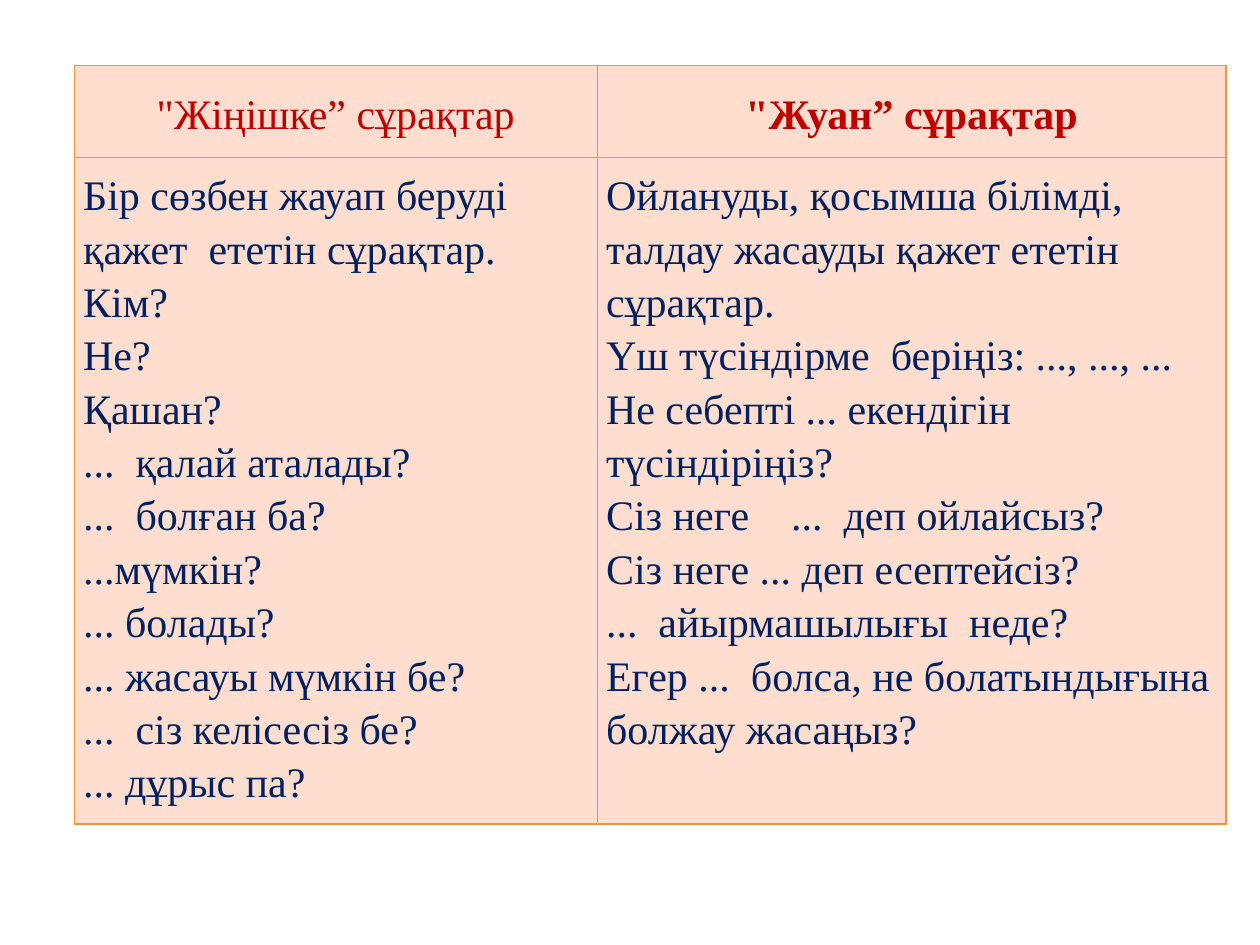
"""Builds a slide with a two-column table comparing thin and thick questions."""
import pptx
import pptx.dml.color
import pptx.enum.text
import pptx.oxml
import pptx.oxml.ns
import pptx.util

COLORS = {"heading": "C00000", "body": "002060", "fill": "FFDDCF", "border": "F69240"}
FONT = "Times New Roman"
SLIDE_SIZE = (10, 7.5)
TABLE_LEFT, TABLE_TOP = 0.59, 0.52
COLUMN_WIDTHS = (4.15, 4.99)
ROW_HEIGHTS = (0.73, 5.29)
MARGIN = 0.07
BORDER_WIDTH = 0.75

QUESTION_TYPES = [
    {
        "heading": "\"Жіңішке” сұрақтар",
        "bold": False,
        "questions": [
            "Бір сөзбен жауап беруді қажет  ететін сұрақтар.",
            "Кім?",
            "Не?",
            "Қашан?",
            "...  қалай аталады?",
            "...  болған ба?",
            "...мүмкін?",
            "... болады?",
            "... жасауы мүмкін бе?",
            "...  сіз келісесіз бе?",
            "... дұрыс па?",
        ],
    },
    {
        "heading": "\"Жуан” сұрақтар",
        "bold": True,
        "questions": [
            "Ойлануды, қосымша білімді, талдау жасауды қажет ететін сұрақтар.",
            "Үш түсіндірме  беріңіз: ..., ..., ...",
            "Не себепті ... екендігін түсіндіріңіз?",
            "Сіз неге    ...  деп ойлайсыз?",
            "Сіз неге ... деп есептейсіз?",
            "...  айырмашылығы  неде?",
            "Егер ...  болса, не болатындығына болжау жасаңыз?",
        ],
    },
]


def write_text(frame, lines, color, bold=False, align=pptx.enum.text.PP_ALIGN.LEFT):
    for index, line in enumerate(lines):
        para = frame.add_paragraph() if index else frame.paragraphs[0]
        para.alignment = align
        para.line_spacing = 1.15
        span = para.add_run()
        span.text = line
        span.font.name = FONT
        span.font.size = pptx.util.Pt(24)
        span.font.bold = bold
        span.font.color.rgb = pptx.dml.color.RGBColor.from_string(color)


def style_cell(cell, anchor):
    cell.vertical_anchor = anchor
    for side in ("left", "top", "right", "bottom"):
        setattr(cell, f"margin_{side}", pptx.util.Inches(MARGIN))
    cell.fill.solid()
    cell.fill.fore_color.rgb = pptx.dml.color.RGBColor.from_string(COLORS["fill"])
    properties = cell._tc.get_or_add_tcPr()
    for position, tag in enumerate(("lnL", "lnR", "lnT", "lnB")):
        border = pptx.oxml.parse_xml(
            f'<a:{tag} {pptx.oxml.ns.nsdecls("a")} w="{pptx.util.Pt(BORDER_WIDTH)}">'
            f'<a:solidFill><a:srgbClr val="{COLORS["border"]}"/></a:solidFill></a:{tag}>'
        )
        properties.insert(position, border)


def main():
    deck = pptx.Presentation()
    deck.slide_width, deck.slide_height = map(pptx.util.Inches, SLIDE_SIZE)
    page = deck.slides.add_slide(deck.slide_layouts[6])
    bounds = (TABLE_LEFT, TABLE_TOP, sum(COLUMN_WIDTHS), sum(ROW_HEIGHTS))
    table = page.shapes.add_table(
        len(ROW_HEIGHTS), len(COLUMN_WIDTHS), *map(pptx.util.Inches, bounds)
    ).table
    for row, height in zip(table.rows, ROW_HEIGHTS):
        row.height = pptx.util.Inches(height)
    for index, (width, kind) in enumerate(zip(COLUMN_WIDTHS, QUESTION_TYPES)):
        table.columns[index].width = pptx.util.Inches(width)
        heading, body = table.cell(0, index), table.cell(1, index)
        style_cell(heading, pptx.enum.text.MSO_ANCHOR.MIDDLE)
        style_cell(body, pptx.enum.text.MSO_ANCHOR.TOP)
        write_text(heading.text_frame, [kind["heading"]], COLORS["heading"],
                   bold=kind["bold"], align=pptx.enum.text.PP_ALIGN.CENTER)
        write_text(body.text_frame, kind["questions"], COLORS["body"])
    deck.save("out.pptx")


if __name__ == "__main__":
    main()
